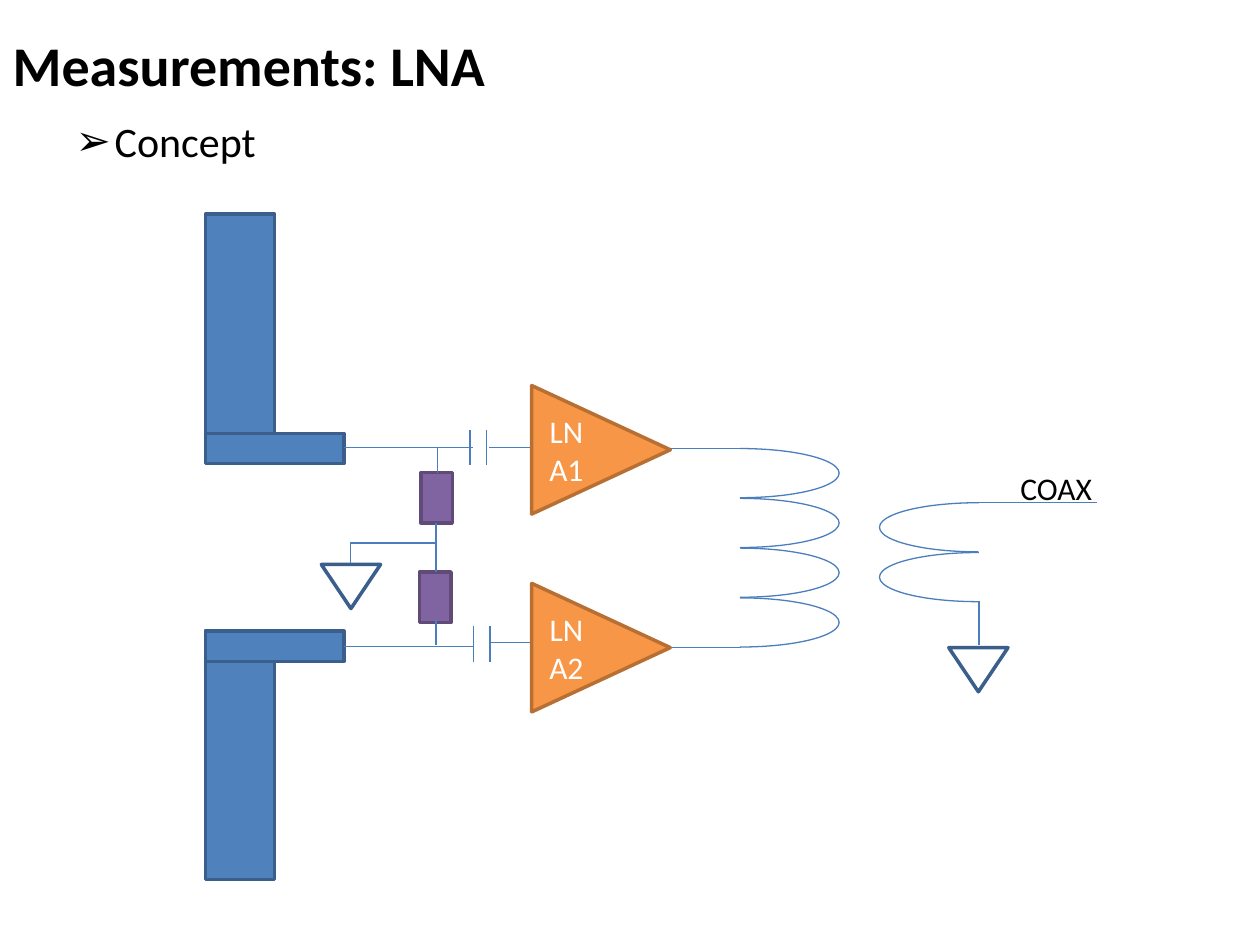
from dataclasses import dataclass
from typing import Optional

import pptx
import pptx.dml.color
import pptx.enum.shapes
import pptx.enum.text
import pptx.oxml.ns
import pptx.util
from lxml import etree

Inches = pptx.util.Inches
Pt = pptx.util.Pt
RGBColor = pptx.dml.color.RGBColor
Form = pptx.enum.shapes.MSO_SHAPE
Link = pptx.enum.shapes.MSO_CONNECTOR
Align = pptx.enum.text.PP_ALIGN
Anchor = pptx.enum.text.MSO_ANCHOR
Fit = pptx.enum.text.MSO_AUTO_SIZE
qn = pptx.oxml.ns.qn

BLACK = RGBColor(0x00, 0x00, 0x00)
WHITE = RGBColor(0xFF, 0xFF, 0xFF)
BLUE = RGBColor(0x4F, 0x81, 0xBD)
NAVY = RGBColor(0x3A, 0x5F, 0x8C)
WIRE = RGBColor(0x4B, 0x7E, 0xBC)
PURPLE = RGBColor(0x80, 0x64, 0xA2)
PLUM = RGBColor(0x5F, 0x4A, 0x78)
ORANGE = RGBColor(0xF7, 0x96, 0x46)
BROWN = RGBColor(0xB7, 0x6F, 0x34)


@dataclass
class Part:
    form: Form
    left: float
    top: float
    width: float
    height: float
    edge: RGBColor
    fill: Optional[RGBColor] = None
    turn: float = 0
    weight: float = 2


@dataclass
class Wire:
    x1: float
    y1: float
    x2: float
    y2: float
    kind: Link = Link.STRAIGHT


def style(text, size: float, color: RGBColor, bold: bool = False) -> None:
    font = text.font
    font.name = "Calibri"
    font.size = Pt(size)
    font.bold = bold
    font.color.rgb = color


def place(shape, left: float, top: float, width: float, height: float) -> None:
    shape.left, shape.top = Inches(left), Inches(top)
    shape.width, shape.height = Inches(width), Inches(height)


def draw_part(slide, part: Part):
    shape = slide.shapes.add_shape(
        part.form, Inches(part.left), Inches(part.top),
        Inches(part.width), Inches(part.height))
    shape.shadow.inherit = False
    shape.rotation = part.turn
    if part.fill is None:
        shape.fill.background()
    else:
        shape.fill.solid()
        shape.fill.fore_color.rgb = part.fill
    shape.line.color.rgb = part.edge
    shape.line.width = Pt(part.weight)
    return shape


def draw_wire(slide, wire: Wire):
    line = slide.shapes.add_connector(
        wire.kind, Inches(wire.x1), Inches(wire.y1),
        Inches(wire.x2), Inches(wire.y2))
    line.line.color.rgb = WIRE
    line.line.width = Pt(0.75)
    etree.SubElement(line._element.spPr, qn("a:effectLst"))
    return line


def draw_coil(slide, left: float, top: float, turns: int, turn: float) -> None:
    for i in range(turns):
        arc = draw_part(slide, Part(Form.ARC, left, top + i * 0.395, 1.57, 0.39,
                                    WIRE, turn=turn, weight=0.75))
        # The arc's angles run from 270 to about 91 degrees.
        arc.adjustments[0] = 162
        arc.adjustments[1] = 54.534


def draw_amp(slide, top: float, name: str) -> None:
    amp = draw_part(slide, Part(Form.ISOSCELES_TRIANGLE, 4.26, top, 1.02, 1.1,
                                BROWN, ORANGE, 90))
    frame = amp.text_frame
    frame.text = name
    frame.word_wrap = True
    frame.vertical_anchor = Anchor.MIDDLE
    frame._txBody.bodyPr.set("vert", "vert270")
    frame.paragraphs[0].alignment = Align.CENTER
    style(frame.paragraphs[0].runs[0], 18, WHITE)


def write_text(slide) -> None:
    title = slide.shapes.title
    place(title, 0, 0.29, 9.88, 0.44)
    frame = title.text_frame
    frame.text = "Measurements: LNA"
    frame.auto_size = Fit.NONE
    frame.vertical_anchor = Anchor.MIDDLE
    frame.paragraphs[0].alignment = Align.LEFT
    style(frame.paragraphs[0].runs[0], 32, BLACK, True)

    body = slide.placeholders[1]
    place(body, 0, 0.87, 10, 6.63)
    frame = body.text_frame
    frame.text = "Concept"
    frame.auto_size = Fit.NONE
    item = frame.paragraphs[0]
    item.level = 1
    item.space_before = Pt(0)
    props = item._p.get_or_add_pPr()
    props.set("marL", str(Inches(0.81)))
    props.set("indent", str(Inches(-0.31)))
    etree.SubElement(props, qn("a:buFont")).set("typeface", "Wingdings")
    etree.SubElement(props, qn("a:buChar")).set("char", "➢")
    props.find(qn("a:buFont")).set("typeface", "Calibri")
    style(item.runs[0], 24, BLACK)


def draw_plan(slide) -> None:
    parts = [Part(Form.RECTANGLE, 1.63, top, 0.55, 1.97, NAVY, BLUE)
             for top in (1.7, 5.01)]
    parts += [Part(Form.RECTANGLE, 1.63, top, 1.1, 0.24, NAVY, BLUE)
              for top in (3.44, 5.01)]
    parts += [Part(Form.RECTANGLE, left, top, 0.25, 0.4, PLUM, PURPLE)
              for left, top in ((3.34, 3.75), (3.33, 4.54))]
    parts += [Part(Form.ISOSCELES_TRIANGLE, left, top, 0.47, 0.35, NAVY, turn=180)
              for left, top in ((2.55, 4.48), (7.53, 5.14))]
    for part in parts:
        draw_part(slide, part)

    wires = [
        Wire(2.73, 3.55, 3.75, 3.55), Wire(2.73, 5.13, 3.75, 5.13),
        Wire(4.85, 3.56, 5.88, 3.56), Wire(4.85, 5.14, 5.88, 5.14),
        Wire(3.88, 3.55, 4.9, 3.55), Wire(3.9, 5.1, 4.93, 5.1),
        Wire(3.47, 3.75, 3.47, 3.55), Wire(3.46, 5.12, 3.46, 4.92),
        Wire(3.46, 4.54, 3.46, 4.31),
        Wire(7.77, 4.77, 7.77, 5.12), Wire(7.77, 3.99, 8.71, 3.99),
    ]
    for left, top in ((3.73, 3.41), (3.76, 4.97)):
        wires += [Wire(x, top, x, top + 0.28) for x in (left, left + 0.13)]
    for wire in wires:
        draw_wire(slide, wire)
    bend = draw_wire(slide, Wire(2.96, 3.97, 3.28, 4.65, Link.ELBOW))
    bend._element.spPr.find(qn("a:xfrm")).set("rot", str(90 * 60000))

    draw_coil(slide, 5.09, 3.56, 4, 0)
    draw_coil(slide, 6.98, 3.99, 2, 180)
    draw_amp(slide, 3.02, "LNA1")
    draw_amp(slide, 4.59, "LNA2")

    label = slide.shapes.add_textbox(
        Inches(8), Inches(3.67), Inches(0.78), Inches(0.4))
    label.text_frame.text = "COAX"
    label.text_frame.word_wrap = False
    label.text_frame.auto_size = Fit.SHAPE_TO_FIT_TEXT
    style(label.text_frame.paragraphs[0].runs[0], 18, BLACK)


def main() -> None:
    deck = pptx.Presentation()
    deck.slide_width, deck.slide_height = Inches(10), Inches(7.5)
    slide = deck.slides.add_slide(deck.slide_layouts[1])
    write_text(slide)
    draw_plan(slide)
    deck.save("out.pptx")


if __name__ == "__main__":
    main()
